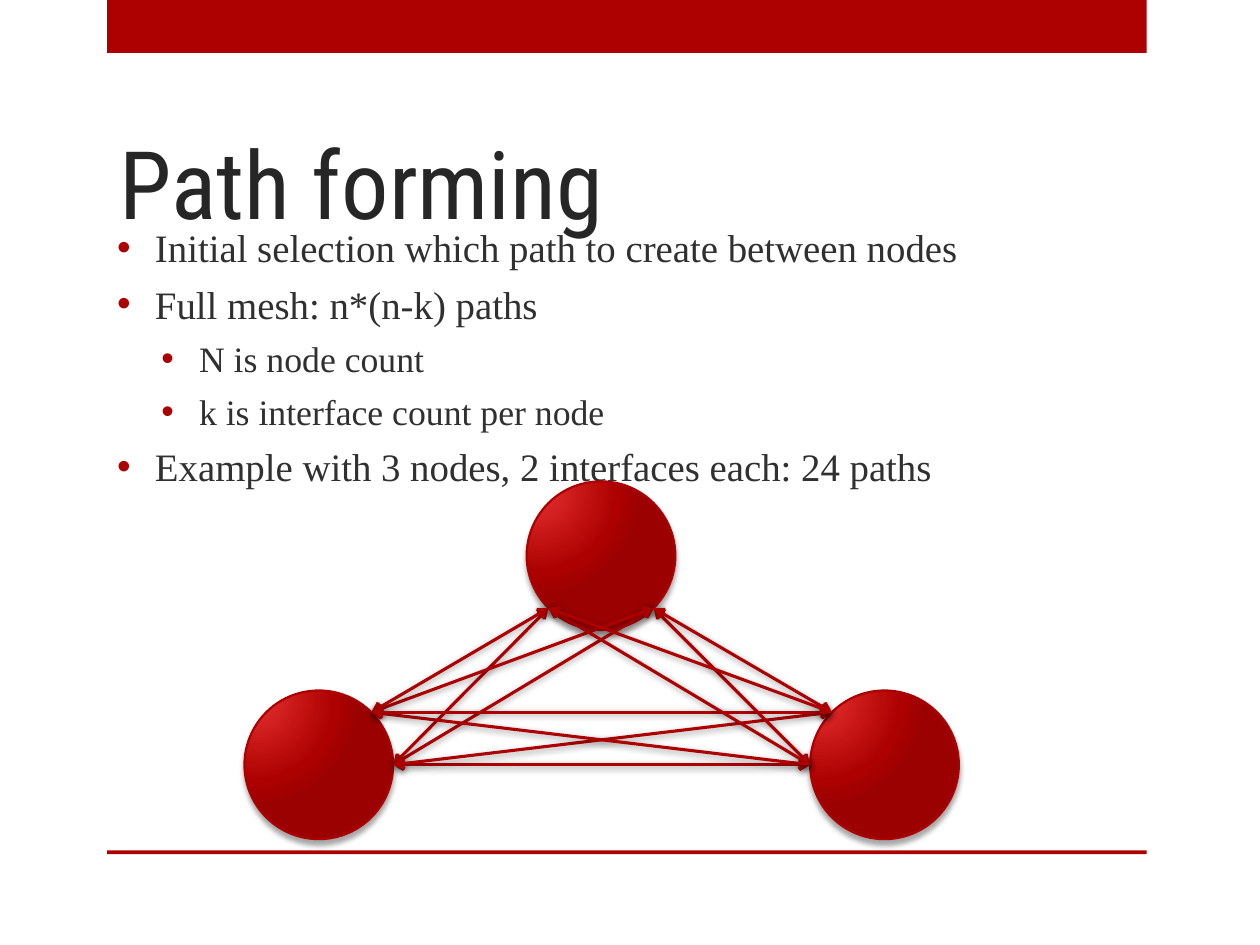
from itertools import combinations, product
from math import cos, radians, sin

from lxml import etree
from pptx import Presentation
from pptx.dml.color import RGBColor
from pptx.enum.shapes import MSO_CONNECTOR, MSO_SHAPE
from pptx.enum.text import MSO_ANCHOR, MSO_AUTO_SIZE, PP_ALIGN
from pptx.oxml.ns import qn
from pptx.util import Inches, Pt

RECTANGLE, OVAL = MSO_SHAPE.RECTANGLE, MSO_SHAPE.OVAL
STRAIGHT = MSO_CONNECTOR.STRAIGHT
BOTTOM, MIDDLE = MSO_ANCHOR.BOTTOM, MSO_ANCHOR.MIDDLE
LEFT = PP_ALIGN.LEFT
NO_AUTOFIT = MSO_AUTO_SIZE.NONE


def color(value):
    return RGBColor.from_string(value)


def add_xml(parent, tag, **attributes):
    return etree.SubElement(parent, qn(tag), attributes)


class SlideBuilder:
    RED = "AD0101"
    TITLE_INK = "262626"
    BODY_INK = "303030"
    TITLE_FONT = "Roboto Condensed"
    BODY_FONT = "Times New Roman"
    LEVEL_SIZES = (22.2, 20.4)
    LEVEL_INDENTS = (0.3, 0.65)
    GLOW = ((0, "E62F2F"), (76, RED), (100, "9C0101"))

    def __init__(self, slide):
        self.slide = slide

    def place(self, holder, left, top, width, height, anchor):
        holder.left, holder.top = Inches(left), Inches(top)
        holder.width, holder.height = Inches(width), Inches(height)
        frame = holder.text_frame
        frame.word_wrap = True
        frame.auto_size = NO_AUTOFIT
        frame.vertical_anchor = anchor
        return frame

    def add_text(self, paragraph, text, size, font, ink):
        paragraph.alignment = LEFT
        run = paragraph.add_run()
        run.text = text
        run.font.size = Pt(size)
        run.font.name = font
        run.font.color.rgb = color(ink)

    def title(self, text, *box):
        frame = self.place(self.slide.shapes.title, *box, BOTTOM)
        self.add_text(frame.paragraphs[0], text, 54, self.TITLE_FONT, self.TITLE_INK)

    def bullets(self, items, *box):
        frame = self.place(self.slide.placeholders[1], *box, MIDDLE)
        frame.margin_top = frame.margin_bottom = 0
        for index, (level, text) in enumerate(items):
            paragraph = frame.add_paragraph() if index else frame.paragraphs[0]
            paragraph.level = level
            paragraph.space_before = Pt(5.8)
            self.add_text(paragraph, text, self.LEVEL_SIZES[level], self.BODY_FONT, self.BODY_INK)
            properties = paragraph._p.get_or_add_pPr()
            properties.set("marL", str(Inches(self.LEVEL_INDENTS[level])))
            properties.set("indent", str(-Inches(0.3)))
            add_xml(add_xml(properties, "a:buClr"), "a:srgbClr", val=self.RED)
            add_xml(properties, "a:buChar", char="•")

    def shape(self, kind, left, top, width, height):
        shape = self.slide.shapes.add_shape(
            kind, Inches(left), Inches(top), Inches(width), Inches(height))
        shape.shadow.inherit = False
        return shape

    def bar(self, *box):
        bar = self.shape(RECTANGLE, *box)
        bar.fill.solid()
        bar.fill.fore_color.rgb = color(self.RED)
        bar.line.fill.background()

    def outline(self, item, width):
        item.line.color.rgb = color(self.RED)
        item.line.width = Pt(width)
        return item._element.spPr.find(qn("a:ln"))

    def shadow(self, effects, alpha, blur, distance, angle):
        outer = add_xml(effects, "a:outerShdw", blurRad=str(Pt(blur)), dist=str(Pt(distance)),
                        dir=str(angle * 60000), rotWithShape="0")
        tint = add_xml(outer, "a:srgbClr", val="000000")
        add_xml(tint, "a:alpha", val=str(alpha * 1000))

    def node(self, x, y, radius):
        node = self.shape(OVAL, x - radius, y - radius, 2 * radius, 2 * radius)
        properties = node._element.spPr
        line = self.outline(node, 1.25)
        gradient = add_xml(properties, "a:gradFill", rotWithShape="1")
        stops = add_xml(gradient, "a:gsLst")
        for position, value in self.GLOW:
            stop = add_xml(stops, "a:gs", pos=str(position * 1000))
            add_xml(stop, "a:srgbClr", val=value)
        circle = add_xml(gradient, "a:path", path="circle")
        add_xml(circle, "a:fillToRect", l="15000", t="15000", r="100000", b="100000")
        line.addprevious(gradient)
        self.shadow(properties.find(qn("a:effectLst")), 35, 3, 3, 90)

    def link(self, start, end):
        link = self.slide.shapes.add_connector(
            STRAIGHT, *(Inches(value) for value in start + end))
        line = self.outline(link, 1.75)
        add_xml(line, "a:headEnd", type="arrow")
        add_xml(line, "a:tailEnd", type="arrow")
        self.shadow(add_xml(link._element.spPr, "a:effectLst"), 40, 4, 1, 88)


def main():
    deck = Presentation()
    deck.slide_width, deck.slide_height = Inches(10), Inches(7.5)
    builder = SlideBuilder(deck.slides.add_slide(deck.slide_layouts[1]))

    builder.bar(0.85, 0, 8.25, 0.42)
    builder.bar(0.85, 6.75, 8.25, 0.03)
    builder.title("Path forming", 0.85, 0.19, 7.42, 1.75)
    builder.bullets([
        (0, "Initial selection which path to create between nodes"),
        (0, "Full mesh: n*(n-k) paths"),
        (1, "N is node count"),
        (1, "k is interface count per node"),
        (0, "Example with 3 nodes, 2 interfaces each: 24 paths"),
    ], 0.83, 1.84, 8.25, 1.98)

    radius = 0.59
    nodes = [
        (2.53, 6.07, (0, -45)),
        (4.77, 4.41, (45, 135)),
        (7.02, 6.07, (180, 225)),
    ]
    interfaces = []
    for x, y, angles in nodes:
        builder.node(x, y, radius)
        interfaces.append([
            (x + radius * cos(radians(angle)), y + radius * sin(radians(angle)))
            for angle in angles])

    for first, second in combinations(interfaces, 2):
        for start, end in product(first, second):
            builder.link(start, end)

    deck.save("out.pptx")


if __name__ == "__main__":
    main()
